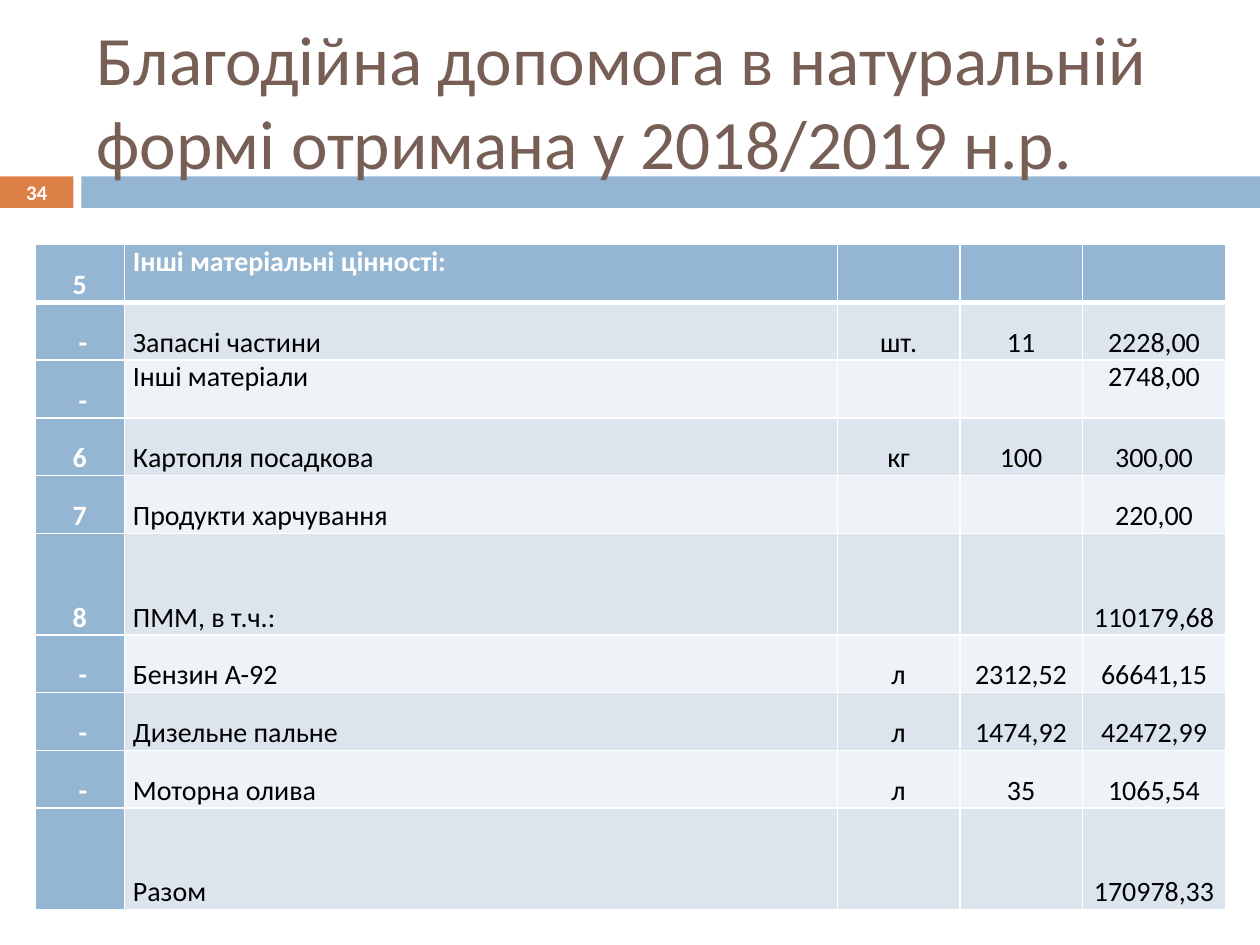
from dataclasses import dataclass

from lxml.etree import SubElement
from pptx import Presentation
from pptx.dml.color import RGBColor
from pptx.enum.shapes import MSO_SHAPE
from pptx.enum.text import MSO_ANCHOR, MSO_AUTO_SIZE, PP_ALIGN
from pptx.oxml.ns import qn
from pptx.util import Pt


@dataclass(frozen=True)
class Theme:
    font: str = "Calibri"
    title_color: str = "775F55"
    accent: str = "94B6D2"
    badge: str = "DD8047"
    bands: tuple = ("DCE5EE", "EEF3F7")
    white: str = "FFFFFF"
    black: str = "000000"
    title_size: float = 39.6
    number_size: float = 11.9
    table_size: float = 16
    border: float = 1
    header_border: float = 3


COLUMNS = [51, 407.5, 70, 70, 82]
ROW_HEIGHT, TALL_ROW_HEIGHT = 33, 58
TALL_ROWS = {5, 9}
TOP_ANCHORED = {(0, 1), (2, 1), (2, 4)}
ROWS = [
    ("5", "Інші матеріальні цінності:", "", "", ""),
    (" -", "Запасні частини", "шт.", "11", "2228,00"),
    (" -", "Інші матеріали", "", "", "2748,00"),
    ("6", "Картопля посадкова", "кг", "100", "300,00"),
    ("7", "Продукти харчування", "", "", "220,00"),
    ("8", "ПММ, в т.ч.:", "", "", "110179,68"),
    (" -", "Бензин А-92", "л", "2312,52", "66641,15"),
    (" -", "Дизельне пальне", "л", "1474,92", "42472,99"),
    (" -", "Моторна олива", "л", "35", "1065,54"),
    ("", "Разом", "", "", "170978,33"),
]


class SlideBuilder:
    def __init__(self, prs, theme):
        self.theme = theme
        self.slide = prs.slides.add_slide(prs.slide_layouts[5])

    def style(self, tf, size, color, bold=False, align=PP_ALIGN.LEFT):
        for p in tf.paragraphs:
            p.alignment = align
            p.font.size = Pt(size)
            for r in p.runs:
                r.font.name = self.theme.font
                r.font.size = Pt(size)
                r.font.bold = bold
                r.font.color.rgb = RGBColor.from_string(color)

    def bar(self, x, y, w, h, color):
        sp = self.slide.shapes.add_shape(MSO_SHAPE.RECTANGLE, Pt(x), Pt(y), Pt(w), Pt(h))
        sp.shadow.inherit = False
        sp.fill.solid()
        sp.fill.fore_color.rgb = RGBColor.from_string(color)
        sp.line.fill.background()

    def title(self, text, x, y, w, h):
        sp = self.slide.shapes.title
        sp.left, sp.top, sp.width, sp.height = Pt(x), Pt(y), Pt(w), Pt(h)
        tf = sp.text_frame
        tf.text = text
        tf.word_wrap = True
        tf.auto_size = MSO_AUTO_SIZE.NONE
        tf.vertical_anchor = MSO_ANCHOR.MIDDLE
        self.style(tf, self.theme.title_size, self.theme.title_color)
        # Bring the title in front of the bars
        self.slide.shapes._spTree.append(sp._element)

    def number(self, text, x, y, w, h):
        tf = self.slide.shapes.add_textbox(Pt(x), Pt(y), Pt(w), Pt(h)).text_frame
        tf.text = text
        tf.word_wrap = True
        tf.margin_top = tf.margin_bottom = 0
        tf.vertical_anchor = MSO_ANCHOR.MIDDLE
        self.style(tf, self.theme.number_size, self.theme.white, True, PP_ALIGN.CENTER)

    def borders(self, cell, row):
        t = self.theme
        widths = {
            "a:lnL": t.border,
            "a:lnR": t.border,
            "a:lnT": t.header_border if row == 1 else t.border,
            "a:lnB": t.header_border if row == 0 else t.border,
        }
        tc_pr = cell._tc.get_or_add_tcPr()
        for tag, width in widths.items():
            ln = SubElement(tc_pr, qn(tag), w=str(Pt(width)))
            fill = SubElement(ln, qn("a:solidFill"))
            SubElement(fill, qn("a:srgbClr"), val=t.white)

    def cell(self, cell, text, row, col):
        t = self.theme
        heading = row == 0 or col == 0
        self.borders(cell, row)
        cell.fill.solid()
        cell.fill.fore_color.rgb = RGBColor.from_string(
            t.accent if heading else t.bands[(row - 1) % 2])
        cell.margin_left = cell.margin_right = Pt(5)
        cell.margin_top = cell.margin_bottom = 0
        top = (row, col) in TOP_ANCHORED
        cell.vertical_anchor = MSO_ANCHOR.TOP if top else MSO_ANCHOR.BOTTOM
        cell.text_frame.text = text
        self.style(cell.text_frame, t.table_size, t.white if heading else t.black,
                   heading, PP_ALIGN.LEFT if col == 1 else PP_ALIGN.CENTER)

    def table(self, rows, x, y):
        heights = [TALL_ROW_HEIGHT if i in TALL_ROWS else ROW_HEIGHT
                   for i in range(len(rows))]
        table = self.slide.shapes.add_table(
            len(rows), len(COLUMNS), Pt(x), Pt(y),
            Pt(sum(COLUMNS)), Pt(sum(heights))).table
        table.first_col = True
        for column, width in zip(table.columns, COLUMNS):
            column.width = Pt(width)
        for i, (values, height) in enumerate(zip(rows, heights)):
            table.rows[i].height = Pt(height)
            for j, text in enumerate(values):
                self.cell(table.cell(i, j), text, i, j)


def main():
    prs = Presentation()
    prs.slide_width, prs.slide_height = Pt(720), Pt(540)
    theme = Theme()
    s = SlideBuilder(prs, theme)

    # Divider bars with the slide number
    s.bar(0, 100.8, 42, 18, theme.badge)
    s.bar(46.5, 100.8, 673.5, 18, theme.accent)
    s.title("Благодійна допомога в натуральній формі отримана у 2018/2019 н.р.",
            48, 18, 642, 78)
    s.number("34", 0, 100, 42, 19.5)

    # Donations table
    s.table(ROWS, 20, 139.75)
    prs.save("out.pptx")


if __name__ == "__main__":
    main()
